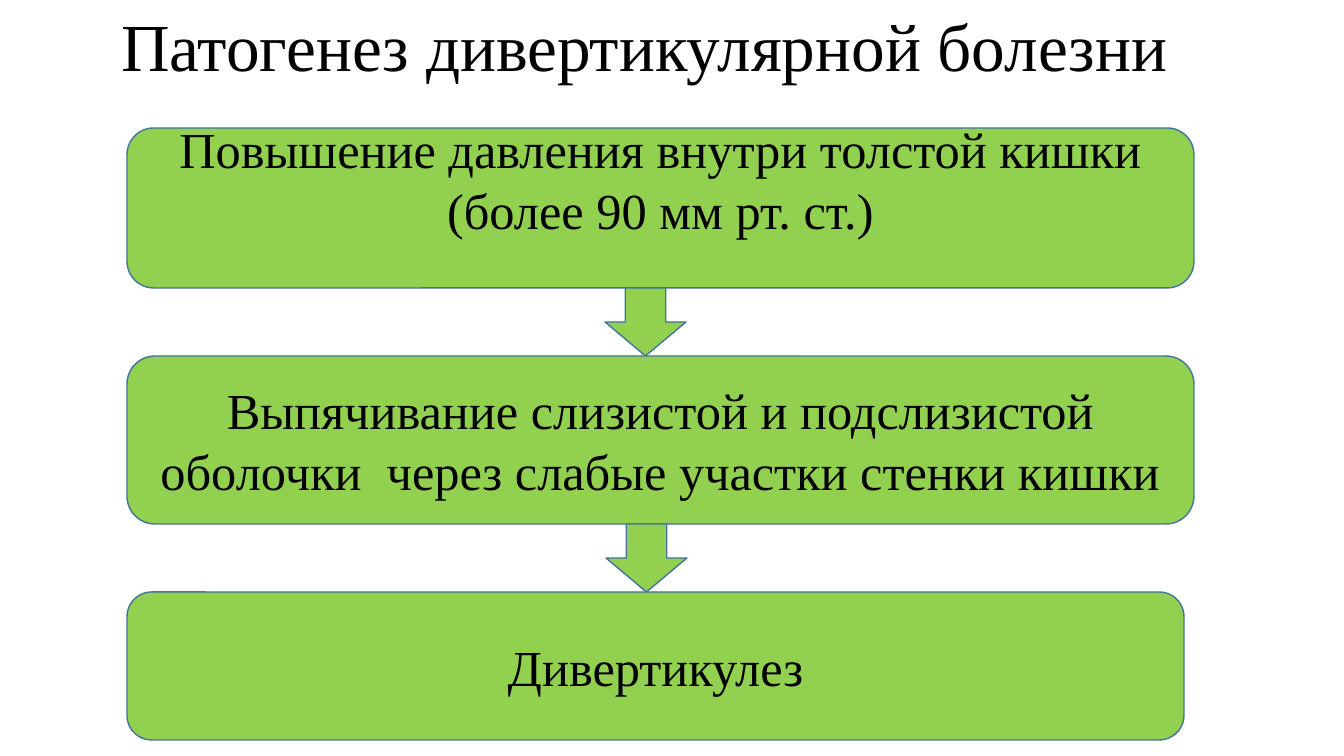
from pptx import Presentation
from pptx import util as u
from pptx.dml.color import RGBColor
from pptx.enum import shapes, text

PX = 914400 / 100.8
FONT = "Times New Roman"
BLACK = RGBColor(0x00, 0x00, 0x00)
GREEN = RGBColor(0x92, 0xD0, 0x50)
OUTLINE = RGBColor(0x43, 0x73, 0x9E)

BOX_LEFT = 127
ARROW_WIDTH, ARROW_HEIGHT = 81, 68


def px(length):
    return u.Emu(round(length * PX))


def write_text(shape, wording, size, line_spacing=1.0):
    frame = shape.text_frame
    frame.word_wrap = True
    frame.vertical_anchor = text.MSO_ANCHOR.MIDDLE
    paragraph = frame.paragraphs[0]
    paragraph.alignment = text.PP_ALIGN.CENTER
    paragraph.line_spacing = line_spacing
    run = paragraph.add_run()
    run.text = wording
    run.font.name = FONT
    run.font.size = u.Pt(size)
    run.font.color.rgb = BLACK


def add_title(slide, wording):
    title = slide.shapes.add_textbox(px(50), px(0), px(1189), px(99))
    write_text(title, wording, 48, line_spacing=0.9)


def add_green_shape(slide, kind, left, top, width, height):
    shape = slide.shapes.add_shape(kind, px(left), px(top), px(width), px(height))
    shape.shadow.inherit = False
    shape.fill.solid()
    shape.fill.fore_color.rgb = GREEN
    shape.line.color.rgb = OUTLINE
    shape.line.width = u.Pt(1)
    return shape


def add_stage(slide, top, width, height, wording, bottom_inset=5):
    box = add_green_shape(slide, shapes.MSO_SHAPE.ROUNDED_RECTANGLE,
                          BOX_LEFT, top, width, height)
    box.text_frame.margin_bottom = px(bottom_inset)
    write_text(box, wording, 36)


def add_arrow(slide, left, top):
    add_green_shape(slide, shapes.MSO_SHAPE.DOWN_ARROW,
                    left, top, ARROW_WIDTH, ARROW_HEIGHT)


def main():
    presentation = Presentation()
    presentation.slide_width = px(1344)
    presentation.slide_height = px(756)
    slide = presentation.slides.add_slide(presentation.slide_layouts[6])

    add_title(slide, "Патогенез дивертикулярной болезни")
    add_stage(slide, 128, 1067, 160,
              "Повышение давления внутри толстой кишки (более 90 мм рт. ст.)",
              bottom_inset=63)
    add_arrow(slide, 605, 288)
    add_stage(slide, 356, 1067, 168,
              "Выпячивание слизистой и подслизистой оболочки  через слабые участки стенки кишки")
    add_arrow(slide, 606, 524)
    add_stage(slide, 592, 1057, 148, "Дивертикулез")

    presentation.save("out.pptx")


if __name__ == "__main__":
    main()
